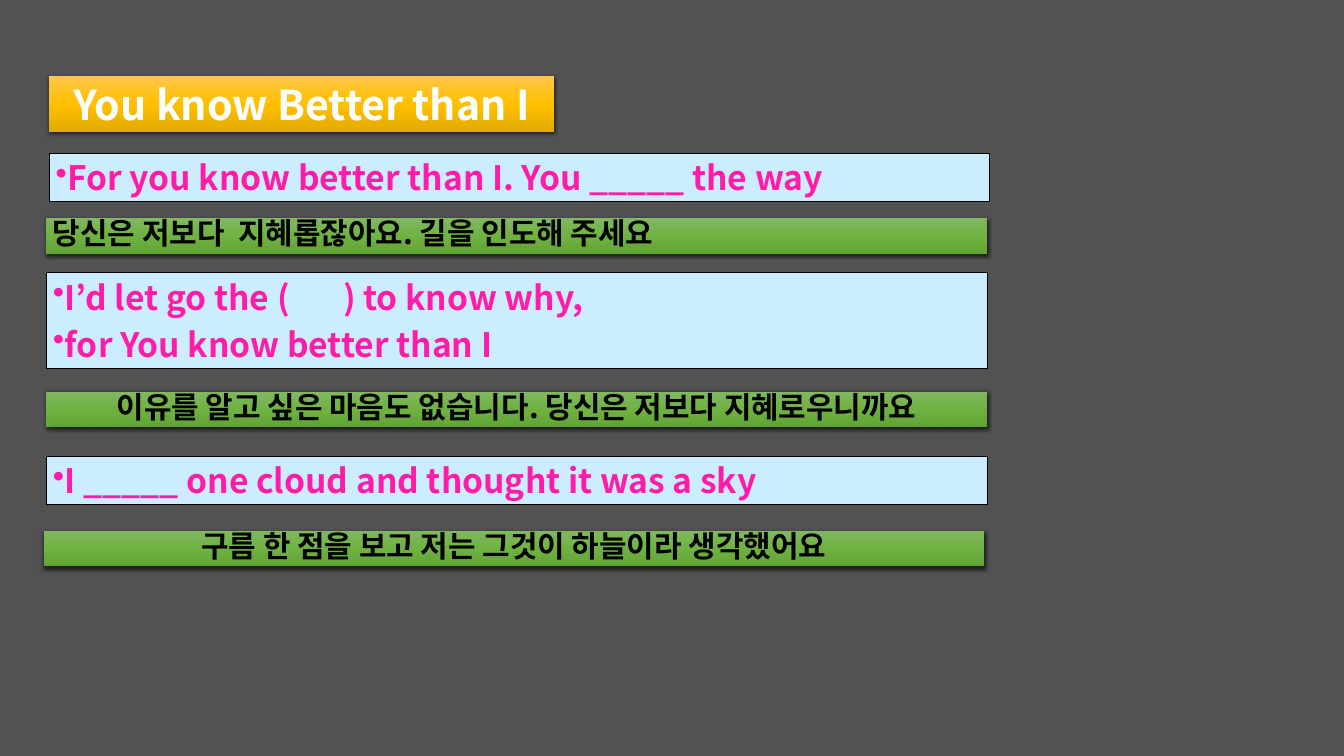
from copy import deepcopy

from lxml.etree import SubElement
from pptx import Presentation
from pptx.dml.color import RGBColor
from pptx.enum.shapes import MSO_SHAPE
from pptx.enum.text import MSO_ANCHOR, MSO_AUTO_SIZE, PP_ALIGN
from pptx.oxml.ns import qn
from pptx.util import Inches, Pt

FONT = "Noto Sans CJK KR"
GOLD = ("FFC64B", "FFC000", "E3AB00")
GREEN = ("81B861", "6FB242", "62A336")


def color(hex_text):
    return RGBColor.from_string(hex_text)


def add_child(parent, tag, **attributes):
    return SubElement(parent, qn(tag), {name: str(value) for name, value in attributes.items()})


def write_text(box, lines, size, text_color, align=PP_ALIGN.LEFT, anchor=MSO_ANCHOR.MIDDLE,
               line_spacing=None, before=None, hanging=None, bullet=None):
    """Fill a box with paragraphs; before is a percentage of the line, hanging is in inches."""
    frame = box.text_frame
    frame.word_wrap = True
    frame.auto_size = MSO_AUTO_SIZE.SHAPE_TO_FIT_TEXT
    frame.vertical_anchor = anchor
    for index, line in enumerate(lines):
        para = frame.add_paragraph() if index else frame.paragraphs[0]
        para.alignment = align
        if line_spacing:
            para.line_spacing = line_spacing
        properties = para._p.get_or_add_pPr()
        if hanging:
            properties.set("marL", str(Inches(hanging)))
            properties.set("indent", str(-Inches(hanging)))
        if before:
            spacing = add_child(properties, "a:spcBef")
            add_child(spacing, "a:spcPct", val=before * 1000)
        if bullet:
            add_child(properties, "a:buChar", char=bullet)
        span = para.add_run()
        span.text = line
        span.font.size = Pt(size)
        span.font.bold = True
        span.font.name = FONT
        span.font.color.rgb = color(text_color)
        add_child(span._r.get_or_add_rPr(), "a:ea", typeface=FONT)


class LyricsSlide:
    def __init__(self, deck, background):
        self.page = deck.slides.add_slide(deck.slide_layouts[6])
        fill = self.page.background.fill
        fill.solid()
        fill.fore_color.rgb = color(background)

    def rectangle(self, left, top, width, height):
        box = self.page.shapes.add_shape(
            MSO_SHAPE.RECTANGLE, Inches(left), Inches(top), Inches(width), Inches(height))
        box.shadow.inherit = False
        return box

    def glossy_bar(self, left, top, width, height, shades):
        """Rectangle with a three-stop vertical gradient and a soft shadow below."""
        box = self.rectangle(left, top, width, height)
        box.line.fill.background()
        box.fill.gradient()
        box.fill.gradient_angle = 270
        stop_list = box._element.spPr.find(".//" + qn("a:gsLst"))
        stop_list.insert(1, deepcopy(stop_list[0]))
        for stop, shade, position in zip(box.fill.gradient_stops, shades, (0, 0.5, 1)):
            stop.color.rgb = color(shade)
            stop.position = position
        effects = box._element.spPr.find(qn("a:effectLst"))
        shadow = add_child(effects, "a:outerShdw", blurRad=Pt(4.5), dist=Pt(1.5),
                           dir=90 * 60000, algn="ctr", rotWithShape=0)
        black = add_child(shadow, "a:srgbClr", val="000000")
        add_child(black, "a:alpha", val=63000)
        return box

    def title(self, text, left, top):
        box = self.glossy_bar(left, top, 7.52, 0.84, GOLD)
        write_text(box, [text], 44, "FFFFFF", align=PP_ALIGN.CENTER, anchor=MSO_ANCHOR.TOP)

    def lyric(self, lines, left, top, height=0.71):
        box = self.rectangle(left, top, 14, height)
        box.fill.solid()
        box.fill.fore_color.rgb = color("CCECFF")
        box.line.color.rgb = color("000000")
        box.line.width = Pt(0.75)
        write_text(box, lines, 36, "FF1CA8", before=20, bullet="•")

    def translation(self, text, left, top, align=PP_ALIGN.CENTER):
        box = self.glossy_bar(left, top, 14, 0.53, GREEN)
        write_text(box, [text], 32, "000000", align=align,
                   line_spacing=0.8, before=50, hanging=0.5)


def main():
    deck = Presentation()
    deck.slide_width = Inches(20)
    deck.slide_height = Inches(11.25)

    slide = LyricsSlide(deck, "525252")
    slide.lyric(["For you know better than I. You _____ the way"], 0.73, 2.28)
    slide.translation("당신은 저보다  지혜롭잖아요. 길을 인도해 주세요", 0.69, 3.25, PP_ALIGN.LEFT)
    slide.lyric(["I’d let go the (       ) to know why,", "for You know better than I"],
                0.69, 4.05, height=1.43)
    slide.translation("이유를 알고 싶은 마음도 없습니다. 당신은 저보다 지혜로우니까요", 0.69, 5.83)
    slide.lyric(["I _____ one cloud and thought it was a sky"], 0.69, 6.79)
    slide.translation("구름 한 점을 보고 저는 그것이 하늘이라 생각했어요", 0.65, 7.9)
    slide.title("You know Better than I", 0.73, 1.13)

    deck.save("out.pptx")


if __name__ == "__main__":
    main()
